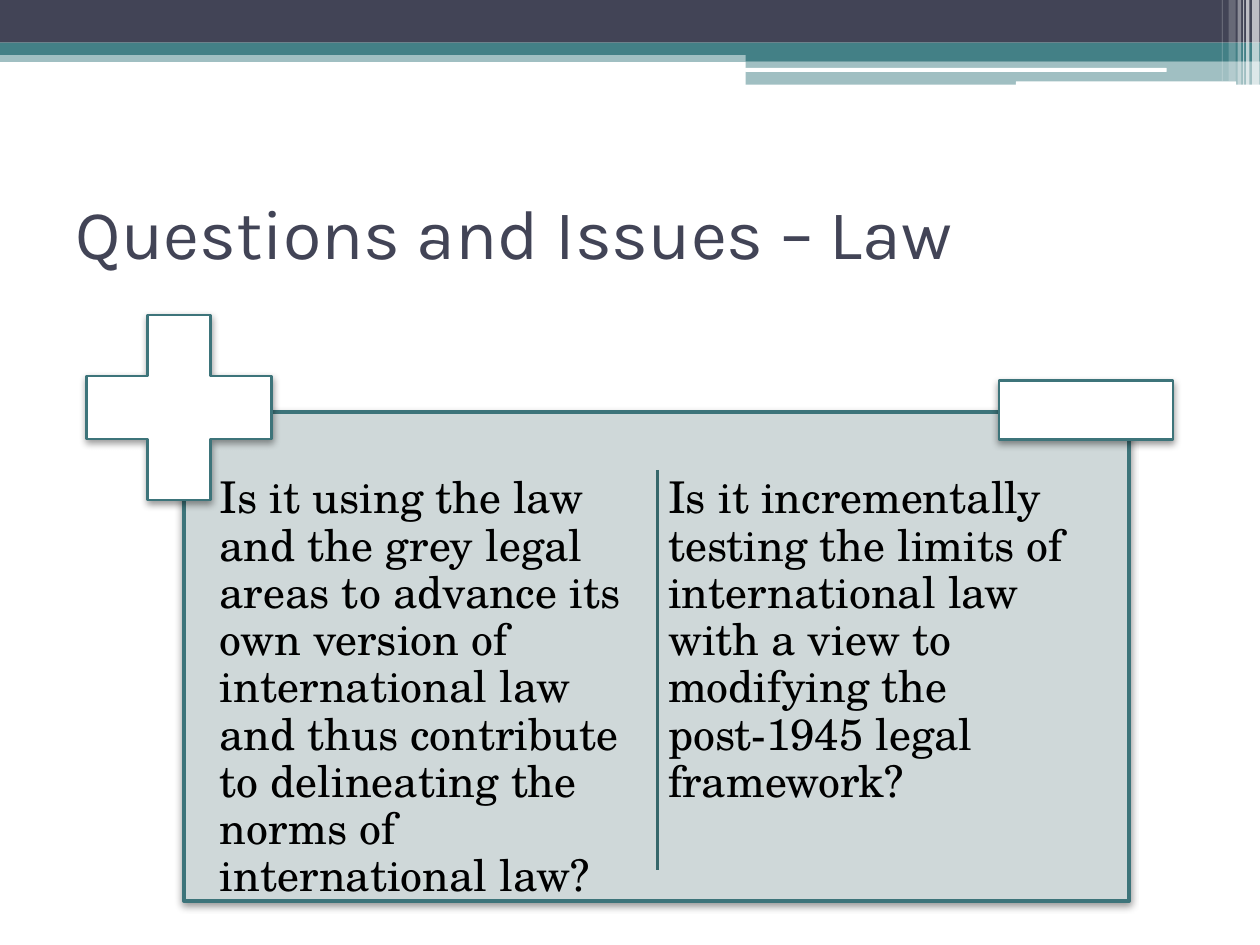
from lxml import etree
from pptx import Presentation
from pptx.dml.color import RGBColor
from pptx.enum.shapes import MSO_CONNECTOR, MSO_SHAPE
from pptx.enum.text import MSO_ANCHOR, MSO_AUTO_SIZE, PP_ALIGN
from pptx.oxml import parse_xml
from pptx.oxml.ns import qn
from pptx.util import Cm, Pt

RECT, ROUND, PLUS = MSO_SHAPE.RECTANGLE, MSO_SHAPE.ROUNDED_RECTANGLE, MSO_SHAPE.CROSS
THEME = {
    "navy": RGBColor(0x42, 0x44, 0x56),
    "teal": RGBColor(0x43, 0x80, 0x86),
    "outline": RGBColor(0x3D, 0x74, 0x7A),
    "divider": RGBColor(0x36, 0x67, 0x6B),
    "panel": RGBColor(0xCF, 0xD8, 0xD9),
    "white": RGBColor(0xFF, 0xFF, 0xFF),
    "black": RGBColor(0, 0, 0),
    "title_font": "Karla",
    "title_size": Pt(40),
    "body_font": "TeX Gyre Schola",
    "body_size": Pt(25),
}
SHADOW = (
    '<a:outerShdw xmlns:a="http://schemas.openxmlformats.org/drawingml/2006/main"'
    f' blurRad="{Pt(4.1)}" dist="{Pt(2)}" dir="5400000" rotWithShape="0">'
    '<a:srgbClr val="000000"><a:alpha val="40000"/></a:srgbClr></a:outerShdw>'
)


def add_filled(kind, left, top, width, height, color, opacity=100):
    """Add a borderless shape, measured in cm, with opacity in percent."""
    shape = slide.shapes.add_shape(kind, Cm(left), Cm(top), Cm(width), Cm(height))
    shape.shadow.inherit = False
    shape.fill.solid()
    shape.fill.fore_color.rgb = THEME[color]
    shape.line.fill.background()
    if opacity < 100:
        fill_color = shape.fill._xPr.find(qn("a:solidFill"))[0]
        etree.SubElement(fill_color, qn("a:alpha")).set("val", str(opacity * 1000))
    return shape


def style_text(frame, font, size, color):
    for para in frame.paragraphs:
        para.alignment = PP_ALIGN.LEFT
        for span in para.runs:
            span.font.name = THEME[font]
            span.font.size = THEME[size]
            span.font.color.rgb = THEME[color]


deck = Presentation()
deck.slide_width, deck.slide_height = Cm(25.4), Cm(19.05)
slide = deck.slides.add_slide(deck.slide_layouts[5])

# Header bands, from back to front
for band in [
    (RECT, 0, 1.02, 25.4, 0.23, "teal", 50),
    (RECT, 0, 0, 25.4, 0.86, "navy"),
    (RECT, 0, 0.86, 25.4, 0.25, "teal"),
    (RECT, 15.03, 1, 10.37, 0.23, "teal"),
    (RECT, 15.03, 1.23, 10.37, 0.48, "teal", 50),
    (ROUND, 15.02, 1.37, 8.5, 0.08, "white"),
    (ROUND, 20.48, 1.64, 4.44, 0.09, "white"),
]:
    add_filled(*band)

# Pale vertical stripes at the right end of the header
for left, width, height, opacity in [
    (25.24, 0.15, 1.73, 65),
    (25.12, 0.07, 1.73, 65),
    (25.06, 0.02, 1.73, 60),
    (24.95, 0.07, 1.73, 40),
    (24.77, 0.14, 1.63, 20),
    (24.63, 0.02, 1.63, 30),
]:
    add_filled(RECT, left, 0, width, height, "white", opacity)

title = slide.shapes.title
title.left, title.top, title.width, title.height = Cm(1.27), Cm(3.18), Cm(22.86), Cm(2.97)
title.text_frame.text = "Questions and Issues – Law"
title.text_frame.vertical_anchor = MSO_ANCHOR.MIDDLE
title.text_frame.auto_size = MSO_AUTO_SIZE.NONE
style_text(title.text_frame, "title_font", "title_size", "navy")

# Panel with its plus and minus signs
panel = add_filled(RECT, 3.71, 8.31, 19.05, 9.85, "panel")
plus = add_filled(PLUS, 1.75, 6.35, 3.73, 3.73, "white")
plus.adjustments[0] = 0.33
minus = add_filled(RECT, 20.14, 7.67, 3.51, 1.19, "white")
for shape, weight in [(panel, 2.5), (plus, 1.5), (minus, 1.5)]:
    shape.line.color.rgb = THEME["outline"]
    shape.line.width = Pt(weight)
    shape._element.spPr.find(qn("a:effectLst")).append(parse_xml(SHADOW))

for left, question in [
    (4.3, "Is it using the law and the grey legal areas to advance its own version of "
          "international law and thus contribute to delineating the norms of international law?"),
    (13.34, "Is it incrementally testing the limits of international law with a view to "
            "modifying the post-1945 legal framework?"),
]:
    box = slide.shapes.add_textbox(Cm(left), Cm(9.47), Cm(8.84), Cm(8.43))
    frame = box.text_frame
    frame.word_wrap = True
    frame.margin_left = frame.margin_right = frame.margin_top = frame.margin_bottom = Cm(0.13)
    frame.text = question
    frame.paragraphs[0].line_spacing = 0.9
    style_text(frame, "body_font", "body_size", "black")

divider = slide.shapes.add_connector(
    MSO_CONNECTOR.STRAIGHT, Cm(13.26), Cm(9.47), Cm(13.26), Cm(17.53))
divider.line.color.rgb = THEME["divider"]
divider.line.width = Pt(1.5)
etree.SubElement(divider._element.spPr, qn("a:effectLst"))

deck.save("out.pptx")
